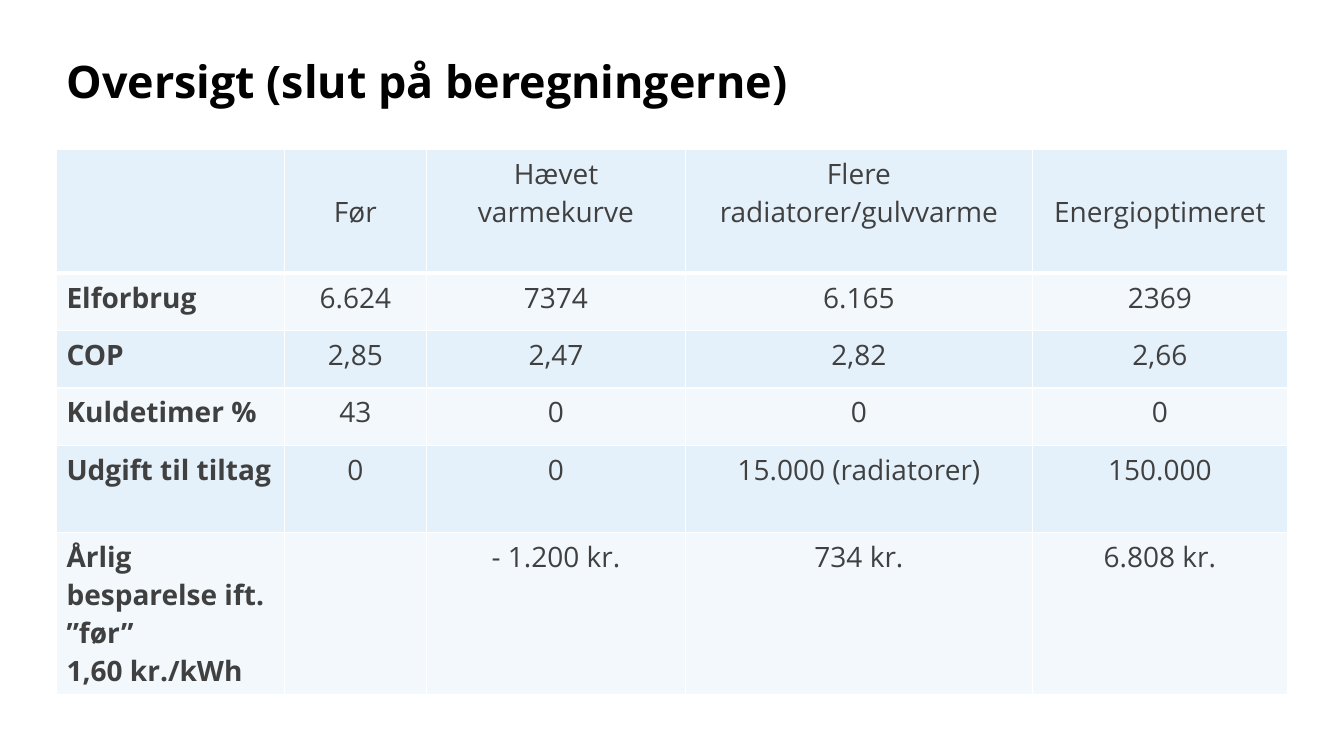
from lxml import etree
from pptx import Presentation
from pptx.dml.color import RGBColor
from pptx.enum.text import MSO_ANCHOR, PP_ALIGN
from pptx.oxml.ns import qn
from pptx.util import Inches, Pt

LEFT, CENTER = PP_ALIGN.LEFT, PP_ALIGN.CENTER
TOP, MIDDLE = MSO_ANCHOR.TOP, MSO_ANCHOR.MIDDLE
BLACK = RGBColor(0x00, 0x00, 0x00)
GREY = RGBColor(0x40, 0x40, 0x40)
WHITE = RGBColor(0xFF, 0xFF, 0xFF)
BAND_COLORS = [RGBColor(0xE5, 0xF1, 0xFA), RGBColor(0xF2, 0xF8, 0xFC)]
FONT = "Open Sans"

COLUMN_WIDTHS = [2.26, 1.41, 2.57, 3.44, 2.53]
ROW_HEIGHTS = [1.23, 0.57, 0.57, 0.57, 0.86, 1.6]
OVERVIEW = [
    ["", "Før", "Hævet varmekurve", "Flere radiatorer/gulvvarme", "Energioptimeret"],
    ["Elforbrug", "6.624", "7374", "6.165", "2369"],
    ["COP", "2,85", "2,47", "2,82", "2,66"],
    ["Kuldetimer %", "43", "0", "0", "0"],
    ["Udgift til tiltag", "0", "0", "15.000 (radiatorer)", "150.000"],
    ["Årlig besparelse ift. ”før” \v1,60 kr./kWh", "", "- 1.200 kr.", "734 kr.", "6.808 kr."],
]
CENTERED_HEADINGS = ("Før", "Energioptimeret")


def style_font(font, size, color, bold):
    font.name = FONT
    font.size = Pt(size)
    font.color.rgb = color
    font.bold = bold


def add_borders(cell, bottom_width):
    """Draw white lines round a cell; call before the cell gets its fill."""
    properties = cell._tc.get_or_add_tcPr()
    for side, width in (("lnL", 1), ("lnR", 1), ("lnT", 1), ("lnB", bottom_width)):
        line = etree.SubElement(properties, qn(f"a:{side}"), w=str(Pt(width)))
        fill = etree.SubElement(line, qn("a:solidFill"))
        etree.SubElement(fill, qn("a:srgbClr"), val=str(WHITE))


deck = Presentation()
deck.slide_width = Inches(13.33)
deck.slide_height = Inches(7.5)
page = deck.slides.add_slide(deck.slide_layouts[5])

title = page.shapes.title
title.left, title.top = Inches(0.56), Inches(0.19)
title.width, title.height = Inches(12.21), Inches(1.29)
title.text_frame.text = "Oversigt (slut på beregningerne)"
title.text_frame.vertical_anchor = MIDDLE
heading = title.text_frame.paragraphs[0]
heading.alignment = LEFT
heading.line_spacing = 0.9
style_font(heading.runs[0].font, 32, BLACK, True)

table = page.shapes.add_table(
    len(ROW_HEIGHTS), len(COLUMN_WIDTHS),
    Inches(0.56), Inches(1.48), Inches(12.21), Inches(5.4),
).table
table.first_row = False
table.horz_banding = False
for column, width in zip(table.columns, COLUMN_WIDTHS):
    column.width = Inches(width)
for row, height in zip(table.rows, ROW_HEIGHTS):
    row.height = Inches(height)

for row_index, texts in enumerate(OVERVIEW):
    for column_index, text in enumerate(texts):
        cell = table.cell(row_index, column_index)
        add_borders(cell, 3 if row_index == 0 else 1)
        cell.fill.solid()
        cell.fill.fore_color.rgb = BAND_COLORS[row_index % 2]
        cell.vertical_anchor = MIDDLE if text in CENTERED_HEADINGS else TOP
        para = cell.text_frame.paragraphs[0]
        para.text = text
        para.alignment = LEFT if column_index == 0 else CENTER
        for span in para.runs:
            style_font(span.font, 20, GREY, column_index == 0)

deck.save("out.pptx")
